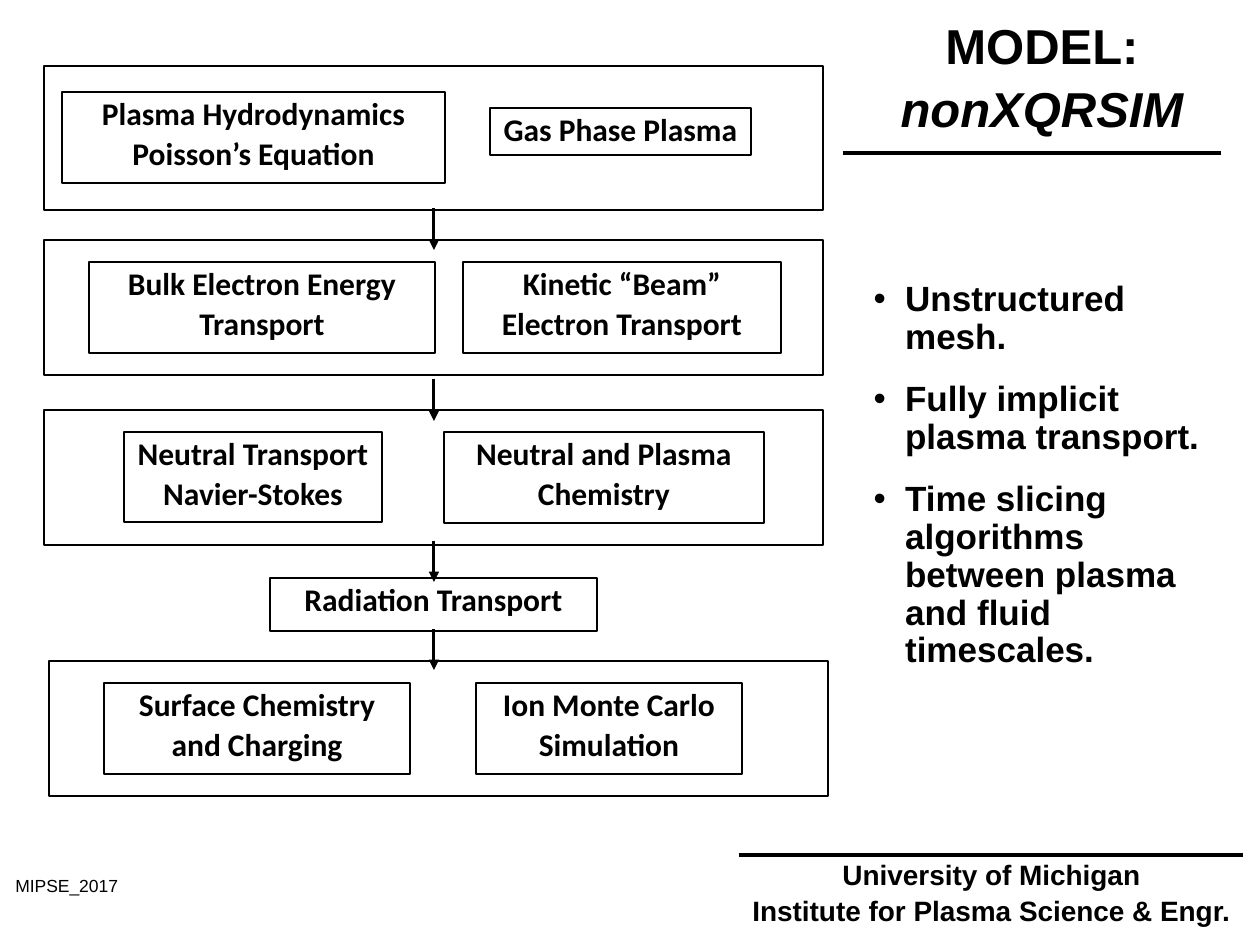
from dataclasses import dataclass
from typing import Any

from lxml import etree
from pptx import Presentation
from pptx import util as u
from pptx.dml import color
from pptx.enum import shapes, text
from pptx.oxml import ns

EMU_PER_PX = 914400 / 126
COLORS = {"ink": "000000"}
INK = color.RGBColor.from_string(COLORS["ink"])
CENTER, LEFT = text.PP_ALIGN.CENTER, text.PP_ALIGN.LEFT


@dataclass(frozen=True)
class Rect:
    x: int
    y: int
    w: int
    h: int


@dataclass(frozen=True)
class Box:
    rect: Rect
    lines: tuple[str, ...]


@dataclass(frozen=True)
class Stage:
    frame: Rect
    boxes: tuple[Box, ...]


STAGES = (
    Stage(Rect(44, 66, 779, 144), (
        Box(Rect(62, 92, 383, 91), ("Plasma Hydrodynamics", "Poisson’s Equation")),
        Box(Rect(490, 108, 261, 47), ("Gas Phase Plasma",)),
    )),
    Stage(Rect(44, 240, 779, 135), (
        Box(Rect(89, 262, 346, 91), ("Bulk Electron Energy", "Transport")),
        Box(Rect(463, 262, 318, 91), ("Kinetic “Beam”", "Electron Transport")),
    )),
    Stage(Rect(44, 410, 779, 135), (
        Box(Rect(124, 432, 258, 90), ("Neutral Transport", "Navier-Stokes")),
        Box(Rect(444, 432, 320, 91), ("Neutral and Plasma", "Chemistry")),
    )),
    Stage(Rect(49, 661, 779, 135), (
        Box(Rect(104, 683, 306, 91), ("Surface Chemistry", "and Charging")),
        Box(Rect(476, 683, 266, 91), ("Ion Monte Carlo", "Simulation")),
    )),
)
RADIATION = Box(Rect(270, 578, 327, 53), ("Radiation Transport",))
ARROW_X = 434
ARROW_SPANS = ((208, 250), (379, 421), (541, 582), (629, 670))
FEATURES = (
    "Unstructured mesh.",
    "Fully implicit plasma transport.",
    "Time slicing algorithms between plasma and fluid timescales.",
)


def px(n: int) -> u.Emu:
    return u.Emu(round(n * EMU_PER_PX))


def bounds(r: Rect) -> tuple[u.Emu, ...]:
    return px(r.x), px(r.y), px(r.w), px(r.h)


def apply(target: Any, values: dict[str, Any]) -> None:
    for name, value in values.items():
        setattr(target, name, value)


def write(sp: Any, lines: tuple[str, ...], size: int, font: str = "Arial",
          bold: bool = True, align: Any = CENTER, after: int = 0,
          wrap: bool = True) -> None:
    tf = sp.text_frame
    apply(tf, {"word_wrap": wrap, "auto_size": text.MSO_AUTO_SIZE.NONE,
               "vertical_anchor": text.MSO_ANCHOR.TOP})
    for i, line in enumerate(lines):
        p = tf.add_paragraph() if i else tf.paragraphs[0]
        apply(p, {"alignment": align, "line_spacing": 0.9,
                  "space_before": u.Pt(0.2 * size), "space_after": u.Pt(after)})
        r = p.add_run()
        r.text = line
        apply(r.font, {"name": font, "size": u.Pt(size), "bold": bold})
        r.font.color.rgb = INK


def add_box(parent: Any, rect: Rect, lines: tuple[str, ...] = ()) -> None:
    sp = parent.add_shape(shapes.MSO_SHAPE.RECTANGLE, *bounds(rect))
    sp.shadow.inherit = False
    sp.fill.background()
    sp.line.color.rgb = INK
    sp.line.width = u.Pt(1.25)
    if lines:
        write(sp, lines, 18, "Calibri", wrap=False)


def add_line(parent: Any, x1: int, y1: int, x2: int, y2: int,
             width: float = 2.25, arrow: bool = False) -> None:
    line = parent.add_connector(shapes.MSO_CONNECTOR.STRAIGHT,
                                px(x1), px(y1), px(x2), px(y2))
    line.line.color.rgb = INK
    line.line.width = u.Pt(width)
    if arrow:
        etree.SubElement(line.line._get_or_add_ln(), ns.qn("a:tailEnd"), type="triangle")
    etree.SubElement(line._element.spPr, ns.qn("a:effectLst"))


def place(sp: Any, rect: Rect) -> Any:
    apply(sp, dict(zip(("left", "top", "width", "height"), bounds(rect))))
    return sp


def add_bullets(sp: Any) -> None:
    write(sp, FEATURES, 20, align=LEFT, after=10)
    for p in sp.text_frame.paragraphs:
        pPr = p._p.get_or_add_pPr()
        pPr.set("marL", str(u.Inches(0.25)))
        pPr.set("indent", str(-u.Inches(0.25)))
        etree.SubElement(pPr, ns.qn("a:buFont"), typeface="Arial")
        etree.SubElement(pPr, ns.qn("a:buChar"), char="•")


def main() -> None:
    prs = Presentation()
    prs.slide_width, prs.slide_height = px(1260), px(945)
    s = prs.slides.add_slide(prs.slide_layouts[1])

    title = place(s.shapes.title, Rect(851, 16, 382, 130))
    write(title, ("MODEL:", "nonXQRSIM"), 28)
    title.text_frame.paragraphs[1].runs[0].font.italic = True
    add_line(s.shapes, 843, 153, 1221, 153)
    add_bullets(place(s.placeholders[1], Rect(861, 275, 364, 416)))

    add_box(s.shapes, RADIATION.rect, RADIATION.lines)
    for stage in STAGES:
        group = s.shapes.add_group_shape().shapes
        for box in stage.boxes:
            add_box(group, box.rect, box.lines)
        add_box(group, stage.frame)
    for top, bottom in ARROW_SPANS:
        add_line(s.shapes, ARROW_X, top, ARROW_X, bottom, 1.75, arrow=True)

    label = s.shapes.add_textbox(*bounds(Rect(3, 871, 179, 32)))
    write(label, ("MIPSE_2017",), 10, bold=False, align=LEFT, after=6)
    footer = s.shapes.add_group_shape().shapes
    add_line(footer, 739, 855, 1243, 855)
    affiliation = footer.add_textbox(*bounds(Rect(732, 855, 519, 81)))
    write(affiliation, ("University of Michigan", "Institute for Plasma Science & Engr."), 16)

    prs.save("out.pptx")


if __name__ == "__main__":
    main()
